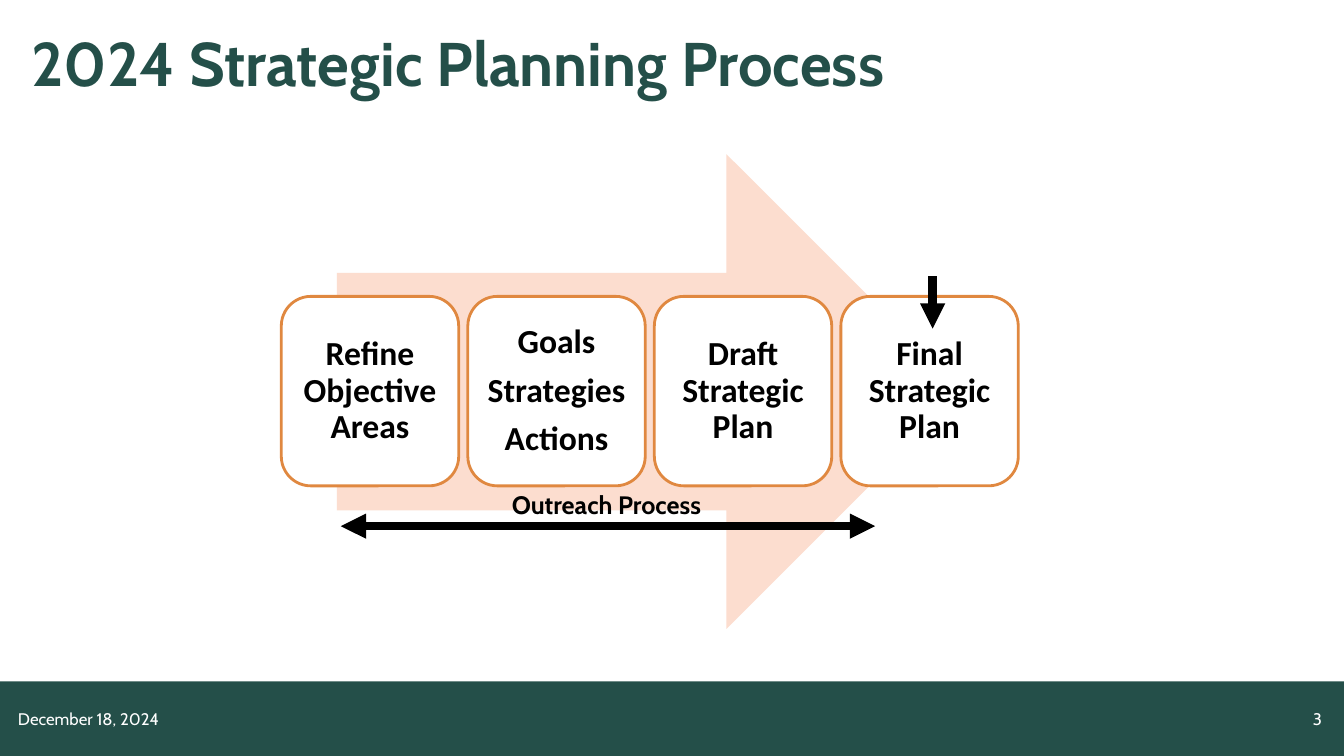
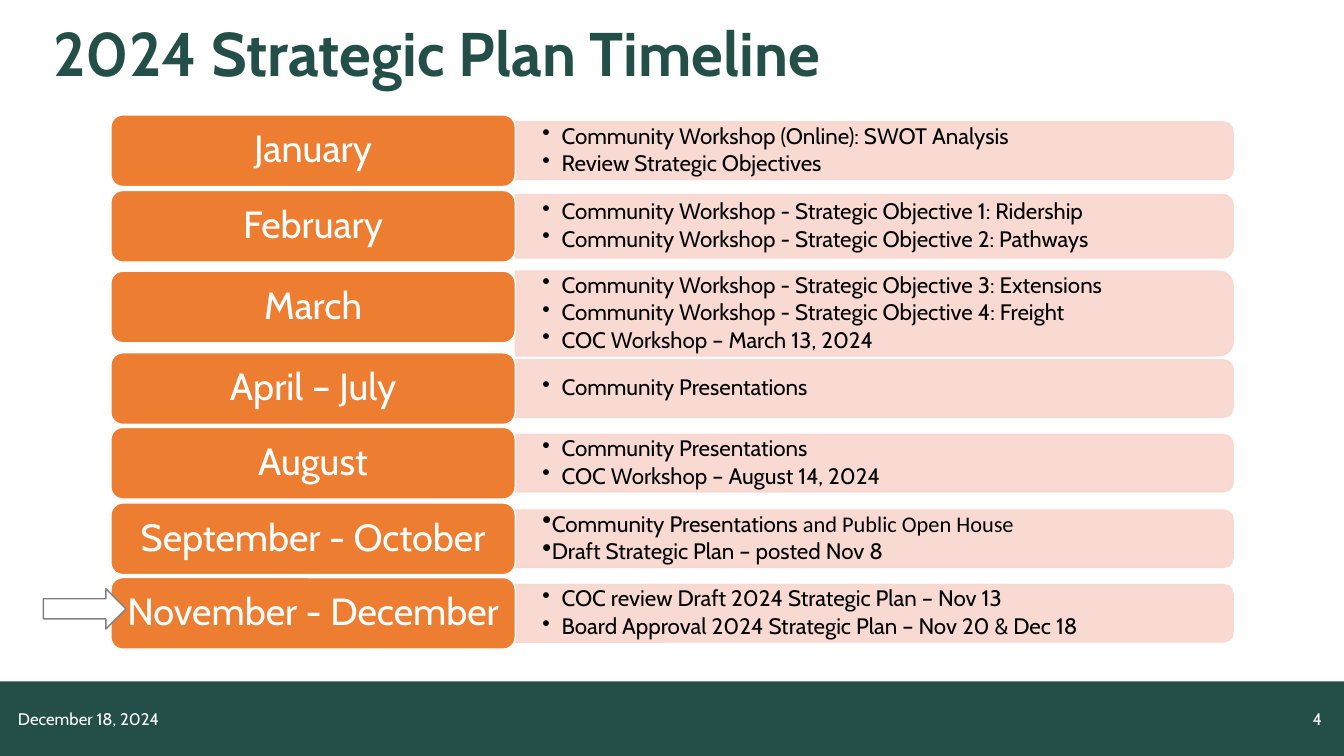
import lxml.etree
import pptx
import pptx.dml.color
import pptx.enum.shapes
import pptx.enum.text
import pptx.oxml.ns
import pptx.util

Inches = pptx.util.Inches
Pt = pptx.util.Pt
RGB = pptx.dml.color.RGBColor
SHAPE = pptx.enum.shapes.MSO_SHAPE
ALIGN = pptx.enum.text.PP_ALIGN
ANCHOR = pptx.enum.text.MSO_ANCHOR
qn = pptx.oxml.ns.qn

GREEN = RGB(0x24, 0x4F, 0x49)
WHITE = RGB(0xFF, 0xFF, 0xFF)
BLACK = RGB(0, 0, 0)
GRAY = RGB(0x80, 0x80, 0x80)
ORANGE = RGB(0xED, 0x7D, 0x31)
STEP_LINE = RGB(0xE0, 0x88, 0x40)
PEACH = RGB(0xFC, 0xDD, 0xCF)
PANEL = RGB(0xF8, 0xD7, 0xCE)
HEAD_FONT, BODY_FONT = "Cabin", "Calibri"

DATE = "December 18, 2024"
PROCESS_TITLE = "2024 Strategic Planning Process"
TIMELINE_TITLE = "2024 Strategic Plan Timeline"
STEPS = [
    ["Refine Objective Areas"],
    ["Goals", "Strategies", "Actions"],
    ["Draft Strategic Plan"],
    ["Final Strategic Plan"],
]
TIMELINE = [
    # month, top, panel height, bullet indent, bullets
    ("January", 1.14, 0.57, 0.19, [
        "Community Workshop (Online): SWOT Analysis",
        "Review Strategic Objectives"]),
    ("February", 1.89, 0.63, 0.19, [
        "Community Workshop - Strategic Objective 1: Ridership",
        "Community Workshop - Strategic Objective 2: Pathways"]),
    ("March", 2.69, 0.84, 0.19, [
        "Community Workshop - Strategic Objective 3: Extensions",
        "Community Workshop - Strategic Objective 4: Freight",
        "COC Workshop – March 13, 2024"]),
    ("April – July", 3.5, 0.57, 0.19, ["Community Presentations"]),
    ("August", 4.24, 0.57, 0.19, [
        "Community Presentations",
        "COC Workshop – August 14, 2024"]),
    ("September - October", 4.99, 0.57, 0, [
        [("Community Presentations ", HEAD_FONT),
         ("and Public Open House", BODY_FONT)],
        "Draft Strategic Plan – posted Nov 8"]),
    ("November - December", 5.73, 0.57, 0.19, [
        "COC review Draft 2024 Strategic Plan – Nov 13",
        "Board Approval 2024 Strategic Plan – Nov 20 & Dec 18"]),
]
STEP_LEFT, STEP_TOP, STEP_W, STEP_H, STEP_PITCH = 2.79, 2.94, 1.76, 1.88, 1.85
MONTH_LEFT, MONTH_W, MONTH_H = 1.1, 4.01, 0.71
PANEL_LEFT, PANEL_W = 5.11, 7.12


def write(sp, paras, size=16, font=HEAD_FONT, color=BLACK, bold=False,
          align=ALIGN.LEFT, anchor=ANCHOR.MIDDLE, inset=(0.1, 0.05),
          line=None, gap=0, bullet=None):
    tf = sp.text_frame
    tf.word_wrap = True
    tf.vertical_anchor = anchor
    tf.margin_left = tf.margin_right = Inches(inset[0])
    tf.margin_top = tf.margin_bottom = Inches(inset[1])
    for i, runs in enumerate(paras):
        p = tf.add_paragraph() if i else tf.paragraphs[0]
        p.alignment = align
        if line:
            p.line_spacing = line
        if i:
            p.space_before = Pt(gap)
        if bullet is not None:
            pPr = p._p.get_or_add_pPr()
            pPr.set("marL", str(Inches(bullet)))
            pPr.set("indent", str(-Inches(bullet)))
            if not bullet:
                lxml.etree.SubElement(pPr, qn("a:buSzPct")).set("val", "119000")
            lxml.etree.SubElement(pPr, qn("a:buChar")).set("char", "•")
        for text, face in [(runs, font)] if isinstance(runs, str) else runs:
            r = p.add_run()
            r.text = text
            r.font.size, r.font.name, r.font.bold = Pt(size), face, bold
            r.font.color.rgb = color


def add_text(s, box, paras, **fmt):
    sp = s.shapes.add_textbox(*map(Inches, box))
    write(sp, paras, **fmt)


def add_box(s, kind, box, fill, line=None, width=1):
    sp = s.shapes.add_shape(kind, *map(Inches, box))
    sp.shadow.inherit = False
    sp.fill.solid()
    sp.fill.fore_color.rgb = fill
    if line is None:
        sp.line.fill.background()
    else:
        sp.line.color.rgb = line
        sp.line.width = Pt(width)
    return sp


def add_arrow(s, start, end, ends):
    c = s.shapes.add_connector(pptx.enum.shapes.MSO_CONNECTOR.STRAIGHT,
                               *map(Inches, start + end))
    c.line.color.rgb = BLACK
    c.line.width = Pt(6)
    ln = c.line._get_or_add_ln()
    for tag in ends:
        lxml.etree.SubElement(ln, qn(tag)).set("type", "triangle")
    lxml.etree.SubElement(c._element.spPr, qn("a:effectLst"))


def add_slide(prs, title, title_box, number):
    s = prs.slides.add_slide(prs.slide_layouts[6])
    add_box(s, SHAPE.RECTANGLE, (0, 6.76, 13.33, 0.74), GREEN)
    add_text(s, title_box, [title], size=44, color=GREEN, bold=True, line=0.9)
    for left, text, align in [(0.08, DATE, ALIGN.LEFT),
                              (10.21, str(number), ALIGN.RIGHT)]:
        add_text(s, (left, 6.93, 3, 0.4), [text], size=12, color=WHITE, align=align)
    return s


def add_process(prs):
    s = add_slide(prs, PROCESS_TITLE, (0.21, 0, 11.5, 1.33), 3)
    add_box(s, SHAPE.RIGHT_ARROW, (3.34, 1.53, 6.22, 4.71), PEACH)
    for i, paras in enumerate(STEPS):
        box = (STEP_LEFT + i * STEP_PITCH, STEP_TOP, STEP_W, STEP_H)
        sp = add_box(s, SHAPE.ROUNDED_RECTANGLE, box, WHITE, STEP_LINE, 2)
        write(sp, paras, size=24, font=BODY_FONT, bold=True, align=ALIGN.CENTER,
              inset=(0.1, 0.1), line=0.9, gap=8.4)
    add_arrow(s, (3.38, 5.22), (8.68, 5.22), ["a:headEnd", "a:tailEnd"])
    add_text(s, (3.75, 4.81, 4.53, 0.4), ["Outreach Process"], size=18, bold=True,
             align=ALIGN.CENTER, anchor=ANCHOR.TOP)
    add_arrow(s, (9.25, 2.74), (9.25, 3.26), ["a:tailEnd"])


def add_timeline(prs):
    s = add_slide(prs, TIMELINE_TITLE, (0.43, 0.16, 8.43, 0.8), 4)
    for month, top, height, indent, bullets in TIMELINE:
        panel_top = max(top, top + (MONTH_H - height) / 2)
        middle = panel_top + height / 2
        turned = (PANEL_LEFT + (PANEL_W - height) / 2, middle - PANEL_W / 2,
                  height, PANEL_W)
        panel = add_box(s, SHAPE.ROUND_2_SAME_RECTANGLE, turned, PANEL, PANEL)
        panel.rotation = 90
        for clr in panel._element.spPr.iter(qn("a:srgbClr")):
            lxml.etree.SubElement(clr, qn("a:alpha")).set("val", "90000")
        add_text(s, (PANEL_LEFT, panel_top, PANEL_W, height), bullets,
                 inset=(0.27, 0), line=0.9, gap=2.4, bullet=indent)
        sp = add_box(s, SHAPE.ROUNDED_RECTANGLE, (MONTH_LEFT, top, MONTH_W, MONTH_H),
                     ORANGE, WHITE)
        write(sp, [month], size=27, color=WHITE, align=ALIGN.CENTER,
              inset=(0.06, 0.06), line=0.9)
    add_box(s, SHAPE.RIGHT_ARROW, (0.43, 5.84, 0.82, 0.4), WHITE, GRAY)


def main():
    prs = pptx.Presentation()
    prs.slide_width, prs.slide_height = Inches(13.33), Inches(7.5)
    add_process(prs)
    add_timeline(prs)
    prs.save("out.pptx")


if __name__ == "__main__":
    main()
